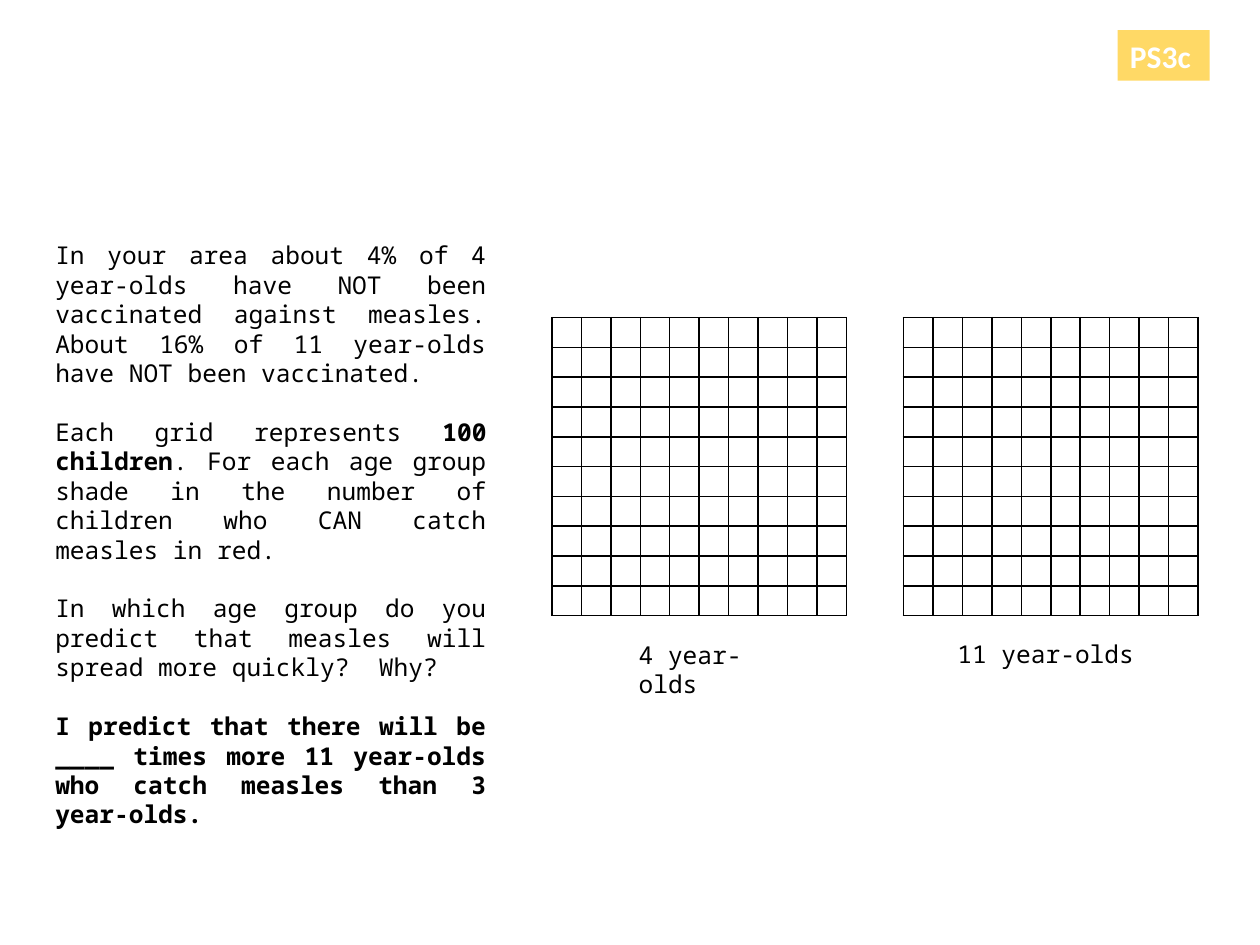
import dataclasses

import lxml.etree
import pptx
import pptx.dml.color
import pptx.enum.shapes
import pptx.enum.text
import pptx.oxml.ns
import pptx.util

Inches = pptx.util.Inches
Pt = pptx.util.Pt
Align = pptx.enum.text.PP_ALIGN


@dataclasses.dataclass(frozen=True)
class Theme:
    ink: str = "000000"
    tag_fill: str = "FFD966"
    tag_text: str = "FFFFFF"
    body_font: str = "Noto Sans Mono"
    tag_font: str = "Calibri"
    body_size: float = 14
    tag_size: float = 18
    cell_size: float = 8
    paragraph_gap: float = 16.8
    grid_line: float = 1


THEME = Theme()

TASK = [
    [("In your area about 4% of 4 year-olds have NOT been vaccinated against "
      "measles. About 16% of 11 year-olds have NOT been vaccinated.", False)],
    [("Each grid represents ", False),
     ("100 children", True),
     (". For each age group shade in the number of children who CAN catch "
      "measles in red.", False)],
    [("In which age group do you predict that measles will spread more "
      "quickly?  Why?", False)],
    [("I predict that there will be ____ times more 11 year-olds who catch "
      "measles than 3 year-olds.", True)],
]


def rgb(value):
    return pptx.dml.color.RGBColor.from_string(value)


def write_text(frame, paragraphs, *, font=THEME.body_font, size=THEME.body_size,
               color=THEME.ink, align=Align.LEFT, gap=0):
    frame.word_wrap = True
    for index, pieces in enumerate(paragraphs):
        paragraph = frame.add_paragraph() if index else frame.paragraphs[0]
        paragraph.alignment = align
        if index:
            paragraph.space_before = Pt(gap)
        for words, bold in pieces:
            run = paragraph.add_run()
            run.text = words
            run.font.name = font
            run.font.size = Pt(size)
            run.font.bold = bold
            run.font.color.rgb = rgb(color)


def add_text(slide, left, top, width, height, paragraphs, **text_format):
    box = slide.shapes.add_textbox(
        Inches(left), Inches(top), Inches(width), Inches(height))
    write_text(box.text_frame, paragraphs, **text_format)


def add_tag(slide, left, top, width, height, label):
    tag = slide.shapes.add_shape(
        pptx.enum.shapes.MSO_SHAPE.RECTANGLE,
        Inches(left), Inches(top), Inches(width), Inches(height))
    tag.shadow.inherit = False
    tag.fill.solid()
    tag.fill.fore_color.rgb = rgb(THEME.tag_fill)
    tag.line.fill.background()
    write_text(tag.text_frame, [[(label, True)]], font=THEME.tag_font,
               size=THEME.tag_size, color=THEME.tag_text)


def format_square(cell):
    qn = pptx.oxml.ns.qn
    cell.margin_left = cell.margin_right = 0
    cell.margin_top = cell.margin_bottom = 0
    properties = cell._tc.get_or_add_tcPr()
    for side in ("a:lnL", "a:lnR", "a:lnT", "a:lnB"):
        border = lxml.etree.SubElement(
            properties, qn(side), w=str(Pt(THEME.grid_line)))
        fill = lxml.etree.SubElement(border, qn("a:solidFill"))
        lxml.etree.SubElement(fill, qn("a:srgbClr"), val=THEME.ink)
    cell.fill.background()
    lxml.etree.SubElement(cell.text_frame.paragraphs[0]._p, qn("a:endParaRPr"),
                          sz=str(THEME.cell_size * 100))


def add_hundred_grid(slide, left, top, width, height):
    grid = slide.shapes.add_table(
        10, 10, Inches(left), Inches(top), Inches(width), Inches(height)).table
    grid.first_row = False
    grid.horz_banding = False
    for cell in grid.iter_cells():
        format_square(cell)


def main():
    presentation = pptx.Presentation()
    presentation.slide_width = Inches(10)
    presentation.slide_height = Inches(7.5)
    slide = presentation.slides.add_slide(presentation.slide_layouts[6])

    add_text(slide, 0.34, 1.86, 3.62, 4.54, TASK,
             align=Align.JUSTIFY, gap=THEME.paragraph_gap)
    for grid_left, label_left, label_top, label_width, age_group in (
        (4.38, 4.97, 5.03, 1.21, "4 year-olds"),
        (7.17, 7.5, 5.02, 2.1, "11 year-olds"),
    ):
        add_hundred_grid(slide, grid_left, 2.52, 2.34, 2.37)
        add_text(slide, label_left, label_top, label_width, 0.34,
                 [[(age_group, False)]])
    add_tag(slide, 8.87, 0.24, 0.73, 0.4, "PS3c")

    presentation.save("out.pptx")


if __name__ == "__main__":
    main()
